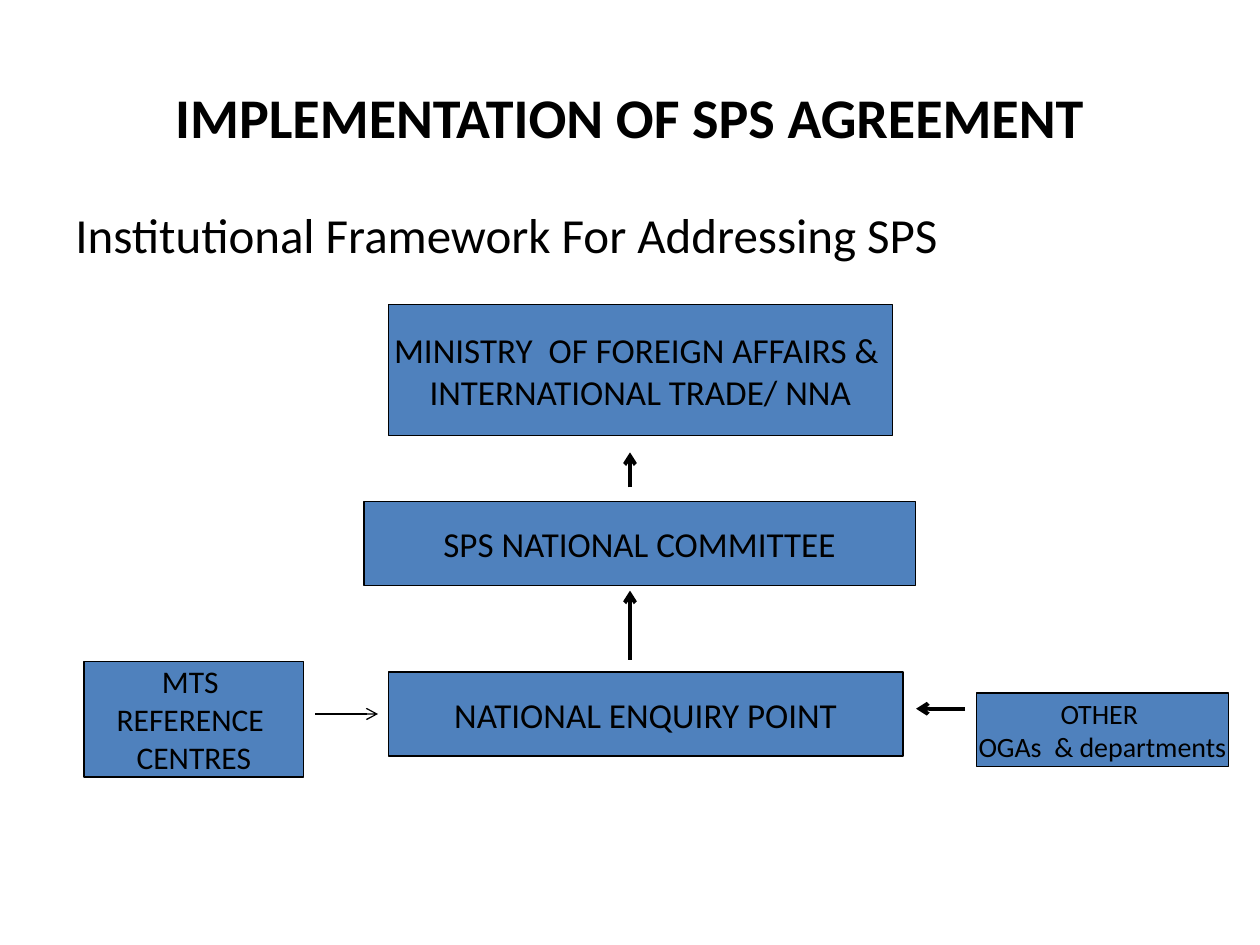
from lxml.etree import SubElement
from pptx import Presentation
from pptx.dml.color import RGBColor
from pptx.enum.shapes import MSO_CONNECTOR as Connector, MSO_SHAPE as Shape
from pptx.enum.text import MSO_ANCHOR as Anchor, PP_ALIGN as Align
from pptx.oxml.ns import qn
from pptx.util import Pt

FONT = "Calibri"
BLACK = "000000"
BLUE = "4F81BD"


def color(hex_code):
    return RGBColor.from_string(hex_code)


def write(frame, text, size, align, anchor, bold=False):
    frame.text = text
    frame.vertical_anchor = anchor
    for paragraph in frame.paragraphs:
        paragraph.alignment = align
        for run in paragraph.runs:
            run.font.name = FONT
            run.font.size = Pt(size)
            run.font.bold = bold
            run.font.color.rgb = color(BLACK)


def add_text(slide, left, top, width, height, text, size, align, anchor, bold=False):
    box = slide.shapes.add_textbox(Pt(left), Pt(top), Pt(width), Pt(height))
    box.text_frame.word_wrap = True
    write(box.text_frame, text, size, align, anchor, bold)
    return box.text_frame


def add_body_box(slide, left, top, width, height, text, size):
    body = slide.shapes.add_shape(Shape.RECTANGLE, Pt(left), Pt(top), Pt(width), Pt(height))
    body.shadow.inherit = False
    body.fill.solid()
    body.fill.fore_color.rgb = color(BLUE)
    body.line.color.rgb = color(BLACK)
    body.line.width = Pt(0.75)
    body.text_frame.word_wrap = False
    write(body.text_frame, text, size, Align.CENTER, Anchor.MIDDLE)


def add_arrow(slide, x1, y1, x2, y2, weight):
    arrow = slide.shapes.add_connector(Connector.STRAIGHT, Pt(x1), Pt(y1), Pt(x2), Pt(y2))
    arrow.line.color.rgb = color(BLACK)
    arrow.line.width = Pt(weight)
    SubElement(arrow.line._get_or_add_ln(), qn("a:tailEnd"), type="arrow")
    SubElement(arrow._element.spPr, qn("a:effectLst"))


def main():
    prs = Presentation()
    prs.slide_width, prs.slide_height = Pt(720), Pt(540)
    slide = prs.slides.add_slide(prs.slide_layouts[6])

    # Title and subtitle
    add_text(slide, 36, 21.6, 648, 90, "IMPLEMENTATION OF SPS AGREEMENT", 32,
             Align.CENTER, Anchor.MIDDLE, bold=True)
    subtitle = add_text(slide, 36, 113.4, 648, 369,
                        "Institutional Framework For Addressing SPS", 28,
                        Align.LEFT, Anchor.TOP)
    subtitle.paragraphs[0].space_before = Pt(5.6)

    # Institutions: left, top, width, height, name, text size
    institutions = [
        (222, 174, 288, 75, "MINISTRY  OF FOREIGN AFFAIRS & \nINTERNATIONAL TRADE/ NNA", 20),
        (208, 286.5, 315, 48, "SPS NATIONAL COMMITTEE", 20),
        (558, 396, 144, 42, "OTHER \nOGAs  & departments", 16),
        (48, 378, 125.5, 66, "MTS \nREFERENCE \nCENTRES", 18),
        (222, 384, 294, 48, "NATIONAL ENQUIRY POINT", 20),
    ]
    for institution in institutions:
        add_body_box(slide, *institution)

    # Reporting lines: start, end, weight
    reporting_lines = [
        (360, 278.5, 360, 258.5, 2.25),
        (360, 377, 360, 337.5, 2.25),
        (551.5, 405, 523.5, 405, 2.25),
        (180, 408, 216, 408, 0.75),
    ]
    for reporting_line in reporting_lines:
        add_arrow(slide, *reporting_line)

    prs.save("out.pptx")


if __name__ == "__main__":
    main()
